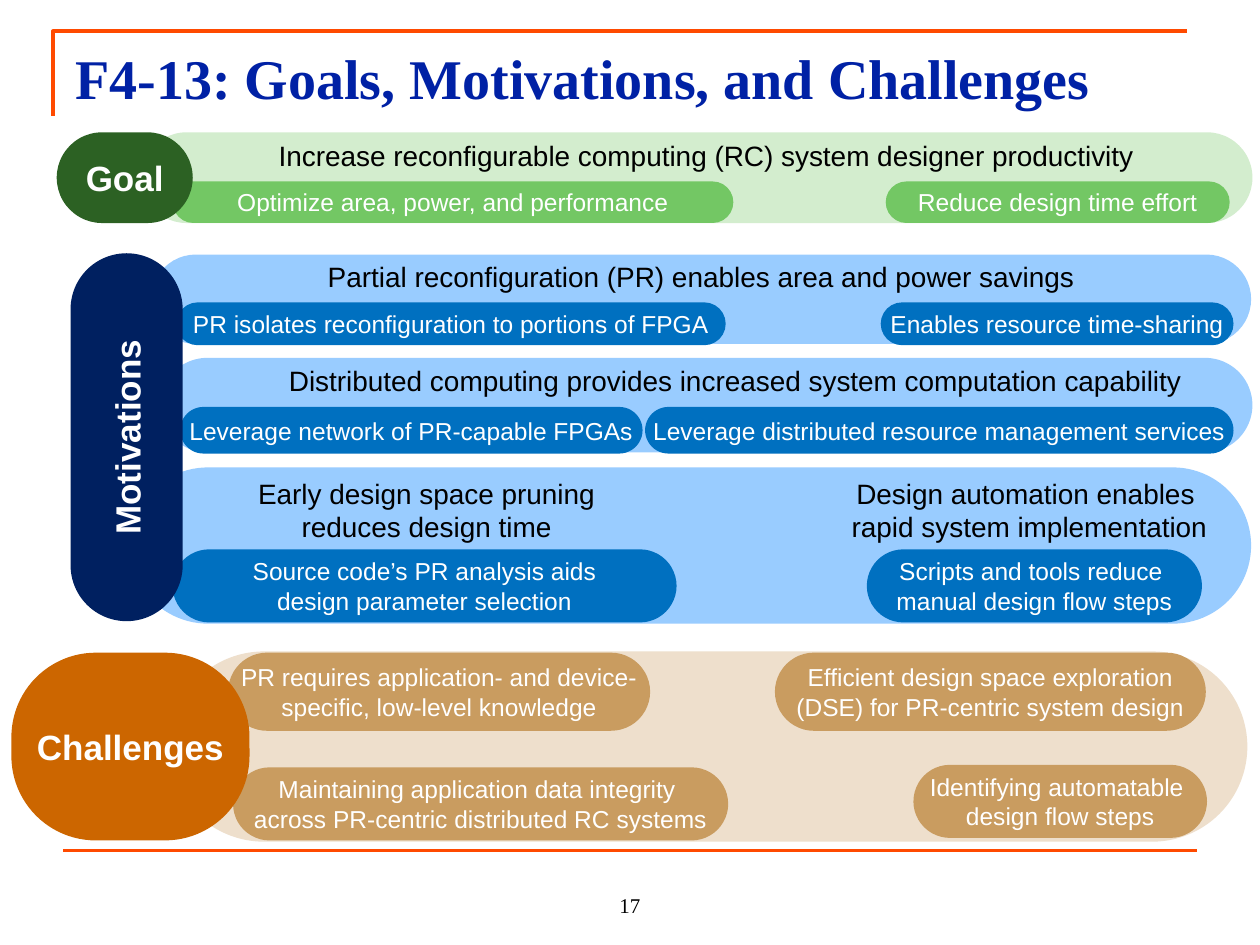
from lxml import etree
from pptx import Presentation
from pptx import util as u
from pptx.dml.color import RGBColor
from pptx.enum import shapes, text
from pptx.oxml.ns import qn

ACCENT = "FF4A00"
SERIF, SANS = "Times New Roman", "Arial"


def paint(color, value):
    color.rgb = RGBColor.from_string(value)


def write(shape, words, size, color, font=SANS, bold=False, align="CENTER",
          anchor="TOP", inset=None, indent=0, wrap=True):
    frame = shape.text_frame
    frame.word_wrap = wrap
    frame.vertical_anchor = text.MSO_ANCHOR[anchor]
    if inset is not None:
        frame.margin_left = frame.margin_right = u.Inches(inset)
        frame.margin_top = frame.margin_bottom = u.Inches(inset)
    para = frame.paragraphs[0]
    para.text = words
    para.alignment = text.PP_ALIGN[align]
    if indent:
        para._p.get_or_add_pPr().set("marL", str(u.Inches(indent)))
    para.font.name, para.font.size, para.font.bold = font, u.Pt(size), bold
    paint(para.font.color, color)


def label(home, box, words, size=16, color="000000", **style):
    shape = home.add_textbox(*map(u.Inches, box))
    write(shape, words, size, color, **style)


def pill(home, box, fill, words="", size=14, bold=False, round=0.5, inset=0):
    shape = home.add_shape(shapes.MSO_SHAPE.ROUNDED_RECTANGLE,
                           *map(u.Inches, box))
    shape.adjustments[0] = round
    shape.shadow.inherit = False
    shape.fill.solid()
    paint(shape.fill.fore_color, fill)
    shape.line.fill.background()
    if words:
        write(shape, words, size, "FFFFFF", bold=bold, anchor="MIDDLE",
              inset=inset)
    return shape


def pills(home, fill, items):
    for box, words in items:
        pill(home, box, fill, words)


def stroke(shape):
    paint(shape.line.color, ACCENT)
    shape.line.width = u.Pt(2.25)


def frame(home):
    # Corner rule around the title
    build = home.build_freeform(u.Inches(0.42), u.Inches(0.92))
    build.add_line_segments([(u.Inches(0.42), u.Inches(0.25)),
                             (u.Inches(9.42), u.Inches(0.25))], close=False)
    corner = build.convert_to_shape()
    corner.shadow.inherit = False
    corner.fill.background()
    stroke(corner)
    # Bottom rule
    rule = home.add_connector(shapes.MSO_CONNECTOR.STRAIGHT,
                              *map(u.Inches, (0.5, 6.75, 9.5, 6.75)))
    stroke(rule)
    etree.SubElement(rule._element.spPr, qn("a:effectLst"))


def goal(home):
    pill(home, (1.12, 1.05, 8.82, 0.72), "D3EDCE")
    pills(home, "73C764", [
        ((1.37, 1.44, 4.45, 0.33), "Optimize area, power, and performance"),
        ((7.03, 1.44, 2.73, 0.33), "Reduce design time effort"),
    ])
    pill(home, (0.45, 1.05, 1.08, 0.72), "2C6123", "Goal", 20, True)
    label(home, (1.27, 1.05, 8.67, 0.37),
          "Increase reconfigurable computing (RC) system designer productivity")


def motives(home):
    for band in ((1.03, 3.71, 8.9, 1.24), (1.2, 2.02, 8.73, 0.71),
                 (1.27, 2.84, 8.67, 0.75)):
        pill(home, band, "99CCFF")
    pills(home, "0070C0", [
        ((1.4, 2.4, 4.36, 0.34),
         "PR isolates reconfiguration to portions of FPGA"),
        ((6.99, 2.4, 2.8, 0.34), "Enables resource time-sharing"),
        ((1.43, 3.23, 3.67, 0.37), "Leverage network of PR-capable FPGAs"),
        ((5.12, 3.23, 4.67, 0.37),
         "Leverage distributed resource management services"),
        ((1.37, 4.36, 4, 0.58),
         "Source code’s PR analysis aids\ndesign parameter selection"),
        ((6.88, 4.36, 2.66, 0.58),
         "Scripts and tools reduce \nmanual design flow steps"),
    ])
    tab = pill(home, (0.56, 2.01, 0.89, 2.92), "002060", "Motivations", 20,
               True, inset=None)
    tab.text_frame._txBody.bodyPr.set("vert", "vert270")
    # Headings of the three bands
    label(home, (1.2, 2.01, 8.73, 0.37),
          "Partial reconfiguration (PR) enables area and power savings")
    label(home, (1.24, 2.84, 8.69, 0.37),
          "Distributed computing provides increased system computation "
          "capability", indent=0.5)
    label(home, (1.43, 3.73, 3.91, 0.64),
          "Early design space pruning\nreduces design time")
    label(home, (6.64, 3.73, 3.06, 0.64),
          "Design automation enables \nrapid system implementation",
          wrap=False)


def hurdles(home):
    pill(home, (1.34, 5.17, 8.56, 1.51), "EEDFCC")
    pills(home, "C99C60", [
        ((1.81, 5.18, 3.35, 0.62),
         "PR requires application- and device-specific, low-level knowledge"),
        ((6.15, 5.18, 3.42, 0.62),
         "Efficient design space exploration (DSE) for PR-centric system "
         "design"),
        ((1.85, 6.09, 3.93, 0.58),
         "Maintaining application data integrity \n"
         "across PR-centric distributed RC systems"),
        ((7.25, 6.07, 2.33, 0.58),
         "Identifying automatable \ndesign flow steps"),
    ])
    pill(home, (0.09, 5.18, 1.89, 1.49), "CC6600", "Challenges", 20, True,
         round=0.45)


def main():
    deck = Presentation()
    deck.slide_width, deck.slide_height = u.Inches(10), u.Inches(7.5)
    home = deck.slides.add_slide(deck.slide_layouts[6]).shapes

    # Rules, title and page number
    frame(home)
    label(home, (0.5, 0.3, 9, 1.03), "F4-13: Goals, Motivations, and Challenges",
          32, "0021A5", font=SERIF, bold=True, align="LEFT")
    label(home, (4, 6.83, 2, 0.5), "17", 12, font=SERIF, anchor="BOTTOM")

    # One group per topic
    for draw in (goal, motives, hurdles):
        draw(home.add_group_shape().shapes)

    deck.save("out.pptx")


if __name__ == "__main__":
    main()
